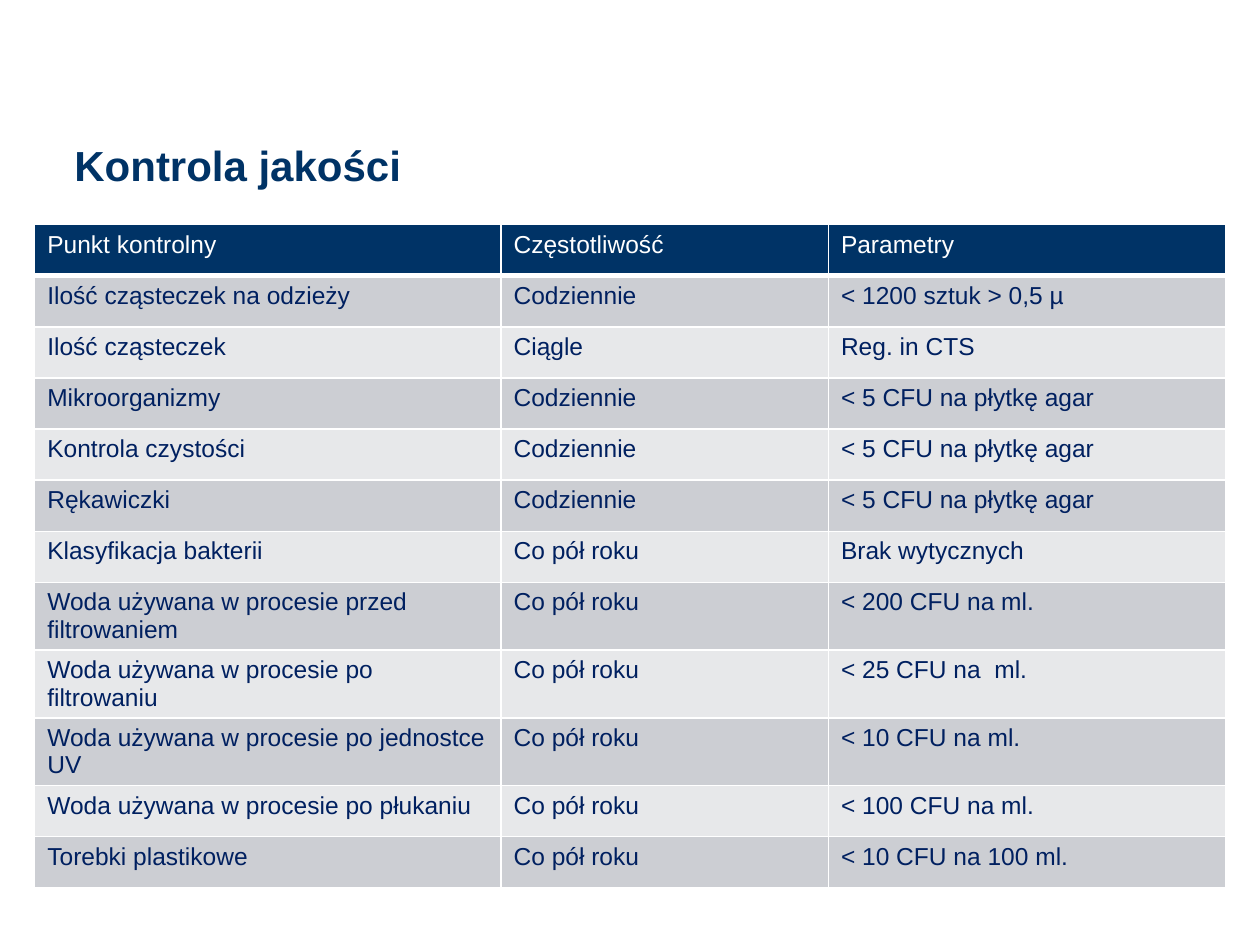
import pptx
import pptx.util
import pptx.dml.color
import pptx.enum.text
import pptx.oxml
import pptx.oxml.ns
from pptx.util import Cm

TITLE = "Kontrola jakości"
HEADER = ("Punkt kontrolny", "Częstotliwość", "Parametry")
CHECKS = [
    ("Ilość cząsteczek na odzieży", "Codziennie", "< 1200 sztuk > 0,5 µ"),
    ("Ilość cząsteczek", "Ciągle", "Reg. in CTS"),
    ("Mikroorganizmy", "Codziennie", "< 5 CFU na płytkę agar"),
    ("Kontrola czystości", "Codziennie", "< 5 CFU na płytkę agar"),
    ("Rękawiczki", "Codziennie", "< 5 CFU na płytkę agar"),
    ("Klasyfikacja bakterii", "Co pół roku", "Brak wytycznych"),
    ("Woda używana w procesie przed filtrowaniem", "Co pół roku", "< 200 CFU na ml."),
    ("Woda używana w procesie po filtrowaniu", "Co pół roku", "< 25 CFU na  ml."),
    ("Woda używana w procesie po jednostce UV", "Co pół roku", "< 10 CFU na ml."),
    ("Woda używana w procesie po płukaniu", "Co pół roku", "< 100 CFU na ml."),
    ("Torebki plastikowe", "Co pół roku", "< 10 CFU na 100 ml."),
]
COLUMN_WIDTHS = (Cm(9.4), Cm(6.6), Cm(8))
ROW_HEIGHT = Cm(1.03)

THEME = {
    "font": "Arial",
    "navy": "003366",
    "body": "002060",
    "white": "FFFFFF",
    "bands": ("CCCED3", "E7E8EA"),
    "title_size": 24,
    "table_size": 14,
    "border": 1,
    "header_border": 3,
}


def color(value):
    return pptx.dml.color.RGBColor.from_string(value)


def write(frame, text, *, size, ink, bold=False):
    """Put one formatted paragraph into a text frame."""
    frame.word_wrap = True
    para = frame.paragraphs[0]
    para.alignment = pptx.enum.text.PP_ALIGN.LEFT
    span = para.add_run()
    span.text = text
    span.font.name = THEME["font"]
    span.font.size = pptx.util.Pt(size)
    span.font.bold = bold
    span.font.color.rgb = color(ink)


def add_borders(cell, bottom):
    """Draw white lines on all four sides of a cell."""
    properties = cell._tc.get_or_add_tcPr()
    widths = {"lnL": THEME["border"], "lnR": THEME["border"],
              "lnT": THEME["border"], "lnB": bottom}
    for side, width in widths.items():
        properties.append(pptx.oxml.parse_xml(
            f'<a:{side} {pptx.oxml.ns.nsdecls("a")} w="{pptx.util.Pt(width)}">'
            f'<a:solidFill><a:srgbClr val="{THEME["white"]}"/></a:solidFill></a:{side}>'))


def add_title(page):
    box = page.shapes.title
    box.left, box.top, box.width, box.height = Cm(1.5), Cm(2.72), Cm(22.4), Cm(1.2)
    frame = box.text_frame
    frame.margin_left = frame.margin_right = frame.margin_top = frame.margin_bottom = 0
    frame.vertical_anchor = pptx.enum.text.MSO_ANCHOR.MIDDLE
    write(frame, TITLE, size=THEME["title_size"], ink=THEME["navy"], bold=True)


def add_checks_table(page):
    rows = [HEADER, *CHECKS]
    table = page.shapes.add_table(
        len(rows), len(HEADER), Cm(0.7), Cm(4.53),
        sum(COLUMN_WIDTHS), ROW_HEIGHT * len(rows)).table
    for column, width in zip(table.columns, COLUMN_WIDTHS):
        column.width = width
    for number, texts in enumerate(rows):
        table.rows[number].height = ROW_HEIGHT
        is_header = number == 0
        fill = THEME["navy"] if is_header else THEME["bands"][(number - 1) % 2]
        ink = THEME["white"] if is_header else THEME["body"]
        bottom = THEME["header_border"] if is_header else THEME["border"]
        for cell, text in zip(table.rows[number].cells, texts):
            add_borders(cell, bottom)
            cell.fill.solid()
            cell.fill.fore_color.rgb = color(fill)
            write(cell.text_frame, text, size=THEME["table_size"], ink=ink)


def main():
    deck = pptx.Presentation()
    deck.slide_width, deck.slide_height = Cm(25.4), Cm(19.05)
    # Title-only layout
    page = deck.slides.add_slide(deck.slide_layouts[5])
    page.background.fill.solid()
    page.background.fill.fore_color.rgb = color(THEME["white"])
    add_title(page)
    add_checks_table(page)
    deck.save("out.pptx")


if __name__ == "__main__":
    main()
